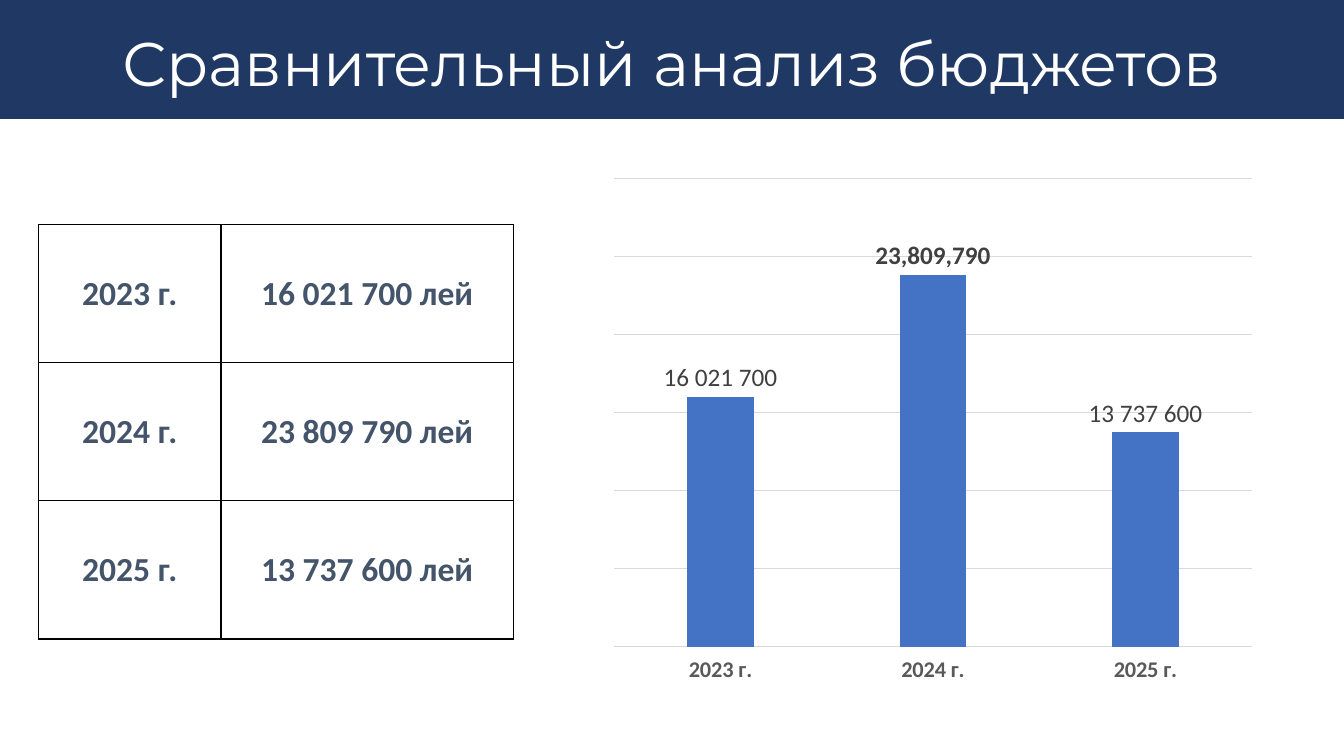
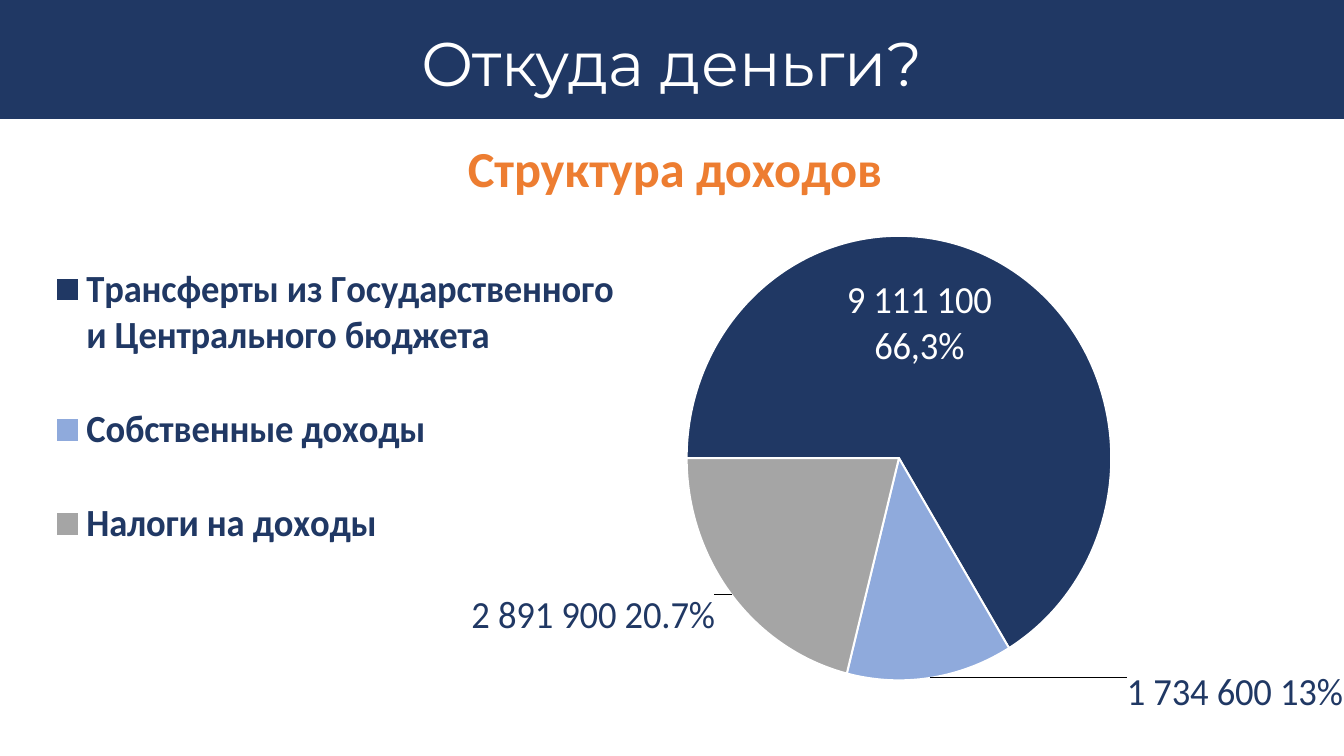
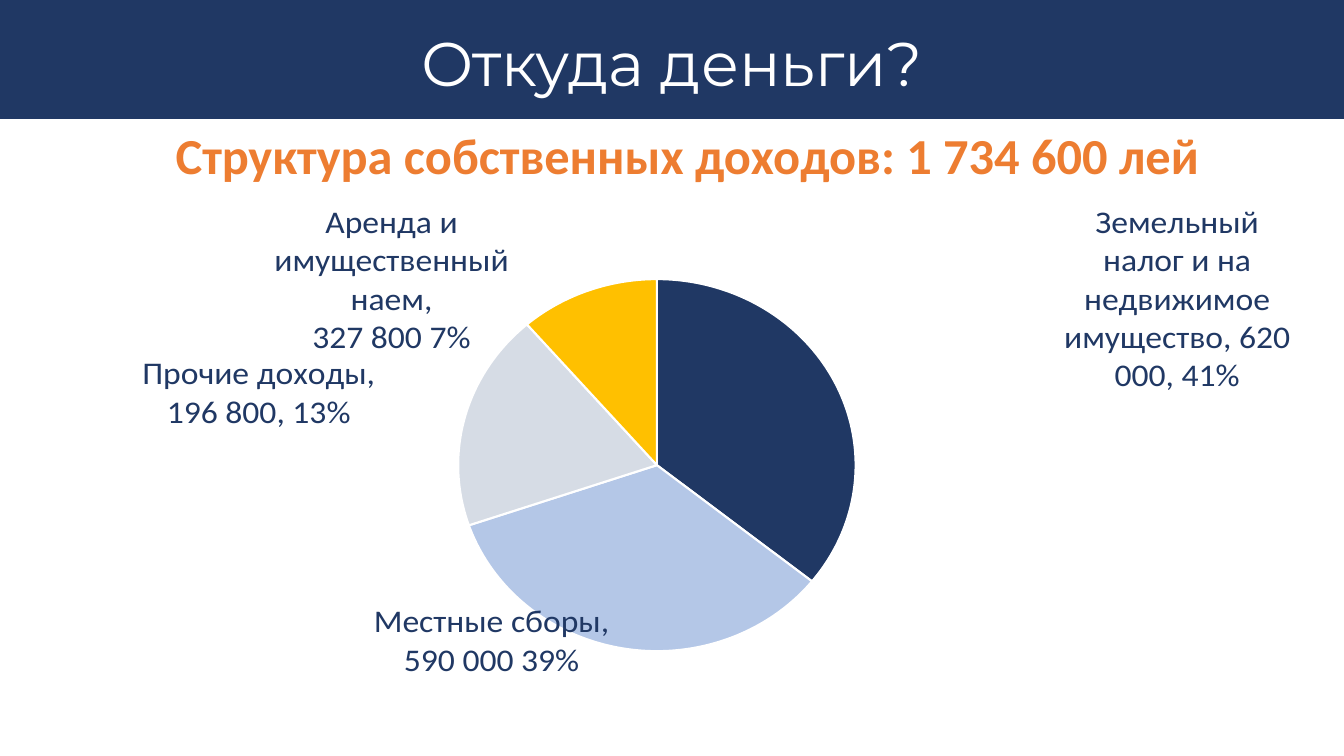
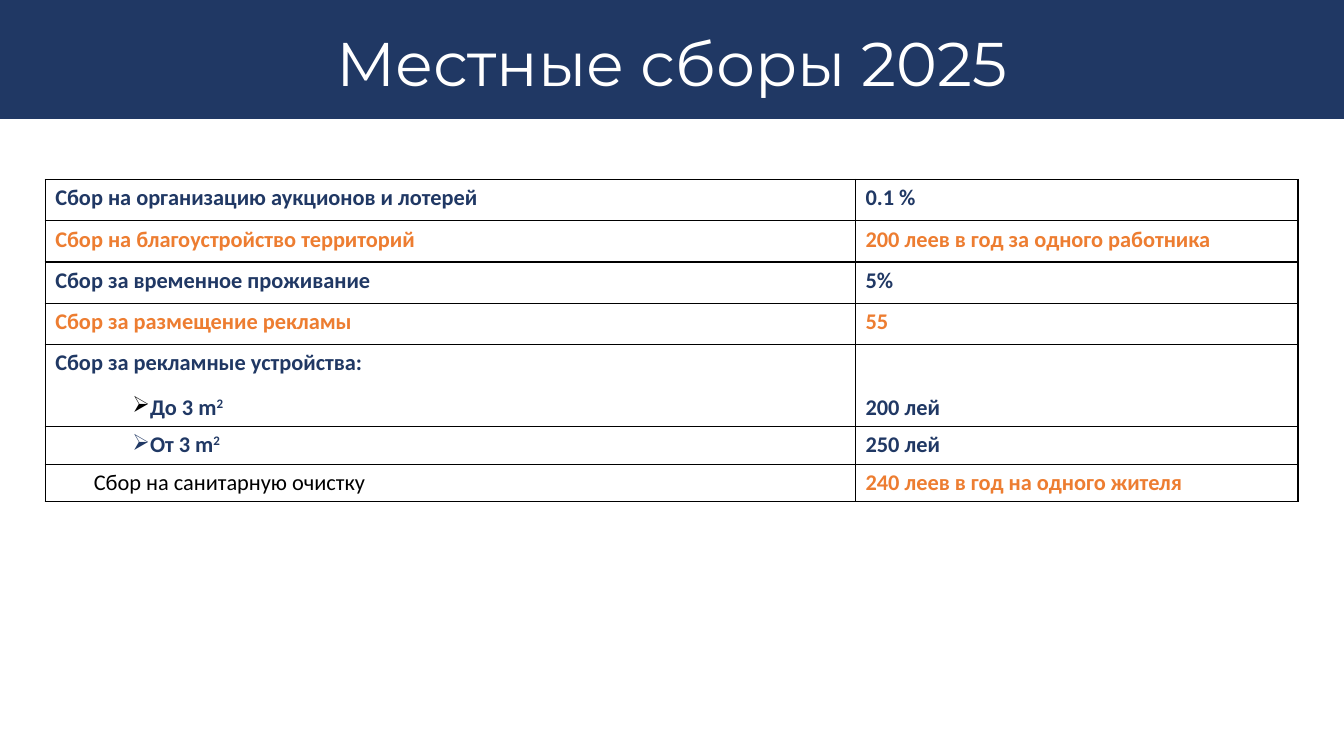
from dataclasses import dataclass

from pptx import Presentation
from pptx.chart.data import CategoryChartData
from pptx.dml.color import RGBColor
from pptx.enum.chart import XL_CHART_TYPE, XL_LABEL_POSITION, XL_LEGEND_POSITION, XL_TICK_LABEL_POSITION, XL_TICK_MARK
from pptx.enum.shapes import MSO_SHAPE
from pptx.enum.text import MSO_ANCHOR, PP_ALIGN
from pptx.oxml import parse_xml
from pptx.oxml.ns import nsdecls, qn
from pptx.util import Cm, Pt


@dataclass(frozen=True)
class Theme:
    navy: str = "203864"
    orange: str = "ED7D31"
    slate: str = "44546A"
    bar: str = "4472C4"
    grid: str = "D9D9D9"
    axis: str = "595959"
    value: str = "404040"
    black: str = "000000"
    white: str = "FFFFFF"
    title_font: str = "Montserrat"
    body_font: str = "Calibri"
    title: int = 44
    subtitle: int = 36
    pie_large: int = 28
    pie_small: int = 24
    amount: int = 24
    value_size: int = 18
    small: int = 16


@dataclass(frozen=True)
class Box:
    left: float
    top: float
    width: float
    height: float

    def lengths(self):
        return Cm(self.left), Cm(self.top), Cm(self.width), Cm(self.height)


THEME = Theme()
SLIDE_WIDTH, SLIDE_HEIGHT = 33.87, 19.05
HEADER = Box(0, 0, SLIDE_WIDTH, 3)


def assign(target, values):
    for name, value in values.items():
        setattr(target, name, value)


def style(font, size, color, bold=False, name=THEME.body_font):
    assign(font, {"size": Pt(size), "bold": bold, "name": name})
    font.color.rgb = RGBColor.from_string(color)


def paint(fill, color):
    fill.solid()
    fill.fore_color.rgb = RGBColor.from_string(color)


def stroke(line, color, width):
    line.color.rgb = RGBColor.from_string(color)
    line.width = Pt(width)


def add_header(slide, text, box):
    title = slide.shapes.title
    band = slide.shapes.add_shape(MSO_SHAPE.RECTANGLE, *box.lengths())
    band.shadow.inherit = False
    paint(band.fill, THEME.navy)
    band.line.fill.background()
    title.element.addprevious(band.element)
    assign(title, {
        "left": Cm(box.left + 0.43), "top": Cm(box.top + 0.64),
        "width": Cm(box.width - 0.85), "height": Cm(box.height - 0.94),
    })
    frame = title.text_frame
    frame.text = text
    assign(frame, {"word_wrap": True, "vertical_anchor": MSO_ANCHOR.MIDDLE})
    paragraph = frame.paragraphs[0]
    assign(paragraph, {"alignment": PP_ALIGN.CENTER, "line_spacing": 0.9})
    style(paragraph.runs[0].font, THEME.title, THEME.white, name=THEME.title_font)


def add_subtitle(slide, text, box):
    frame = slide.shapes.add_textbox(*box.lengths()).text_frame
    frame.word_wrap = True
    paragraph = frame.paragraphs[0]
    paragraph.alignment = PP_ALIGN.CENTER
    run = paragraph.add_run()
    run.text = text
    style(run.font, THEME.subtitle, THEME.orange, True)


def add_grid(slide, box, columns, rows):
    table = slide.shapes.add_table(len(rows), len(columns), *box.lengths()).table
    assign(table, {"first_row": False, "horz_banding": False})
    for column, width in zip(table.columns, columns):
        column.width = Cm(width)
    for row, height in zip(table.rows, rows):
        row.height = Cm(height)
    for cell in table.iter_cells():
        cell.fill.background()
        properties = cell._tc.get_or_add_tcPr()
        for position, side in enumerate(("lnL", "lnR", "lnT", "lnB")):
            properties.insert(position, parse_xml(
                f'<a:{side} {nsdecls("a")} w="12700"><a:solidFill>'
                f'<a:srgbClr val="{THEME.black}"/></a:solidFill></a:{side}>'))
    return table


def add_budget_table(slide, box, budgets):
    year_width = 4.6
    table = add_grid(slide, box, [year_width, box.width - year_width],
                     [box.height / len(budgets)] * len(budgets))
    for row, texts in zip(table.rows, budgets):
        for cell, text in zip(row.cells, texts):
            cell.text = text
            cell.vertical_anchor = MSO_ANCHOR.MIDDLE
            paragraph = cell.text_frame.paragraphs[0]
            paragraph.alignment = PP_ALIGN.CENTER
            style(paragraph.runs[0].font, THEME.amount, THEME.slate, True)


def write_fee(paragraph, text, color, bold=True, superscript=""):
    for part in filter(None, (text, superscript)):
        run = paragraph.add_run()
        run.text = part
        style(run.font, THEME.small, color, bold)
    if superscript:
        run._r.get_or_add_rPr().set("baseline", "30000")


def indent(paragraph, first_line=0.0, bullet_color=None):
    properties = paragraph._p.get_or_add_pPr()
    for name, value in {"marL": 0.97, "indent": first_line}.items():
        properties.set(name, str(Cm(value)))
    if bullet_color:
        properties.append(parse_xml(
            f'<a:buClr {nsdecls("a")}><a:srgbClr val="{bullet_color}"/></a:buClr>'))
        properties.append(parse_xml(f'<a:buChar {nsdecls("a")} char="➢"/>'))


def add_fee_table(slide, box, fees):
    name_width = 20.42
    table = add_grid(slide, box, [name_width, box.width - name_width],
                     [1.04] * len(fees) + [2.03, 0.96, 0.93])
    for index, texts in enumerate(fees):
        color = THEME.orange if index % 2 else THEME.navy
        for column, text in enumerate(texts):
            write_fee(table.cell(index, column).text_frame.paragraphs[0], text, color)

    devices, larger, cleaning = range(len(fees), len(fees) + 3)
    for column in range(2):
        table.cell(devices, column).vertical_anchor = MSO_ANCHOR.BOTTOM
    device_names = table.cell(devices, 0).text_frame
    heading = device_names.paragraphs[0]
    heading.space_after = Pt(6)
    write_fee(heading, "Сбор за рекламные устройства:", THEME.navy)
    smaller_name = device_names.add_paragraph()
    smaller_name.space_before = Pt(6)
    larger_name = table.cell(larger, 0).text_frame.paragraphs[0]
    for paragraph, text, bullet_color in ((smaller_name, "До 3 m", THEME.black),
                                          (larger_name, "От 3\u00a0m", THEME.navy)):
        indent(paragraph, 0.97, bullet_color)
        write_fee(paragraph, text, THEME.navy, superscript="2")
    cleaning_name = table.cell(cleaning, 0).text_frame.paragraphs[0]
    indent(cleaning_name)
    write_fee(cleaning_name, "Сбор на санитарную очистку", THEME.black, False)
    for index, text, color in ((devices, "200 лей", THEME.navy),
                               (larger, "250 лей", THEME.navy),
                               (cleaning, "240 леев в год на одного жителя", THEME.orange)):
        write_fee(table.cell(index, 1).text_frame.paragraphs[0], text, color)


def manual_layout(x, y, width=None, height=None, target=None):
    parts = []
    if target:
        parts.append(f'<c:layoutTarget val="{target}"/>')
    if width:
        parts.append('<c:xMode val="edge"/><c:yMode val="edge"/>')
    parts.append(f'<c:x val="{x}"/><c:y val="{y}"/>')
    if width:
        parts.append(f'<c:w val="{width}"/><c:h val="{height}"/>')
    return parse_xml(f'<c:layout {nsdecls("c")}><c:manualLayout>'
                     f'{"".join(parts)}</c:manualLayout></c:layout>')


def add_base_chart(slide, kind, box, categories, values, plot_area):
    data = CategoryChartData()
    data.categories = categories
    data.add_series("Series 1", values)
    chart = slide.shapes.add_chart(kind, *box.lengths(), data).chart
    assign(chart, {"has_title": False, "has_legend": False})
    style(chart.font, 10, THEME.black)
    area = next(chart.element.iter(qn("c:plotArea")))
    for layout in area.findall(qn("c:layout")):
        area.remove(layout)
    area.insert(0, manual_layout(*plot_area, target="inner"))
    return chart


def label_point(point, text, size, color, position):
    label = point.data_label
    frame = label.text_frame
    frame.text = text
    for paragraph in frame.paragraphs:
        for run in paragraph.runs:
            style(run.font, size, color)
    label.position = position


def add_budget_chart(slide, box, years, values):
    chart = add_base_chart(slide, XL_CHART_TYPE.COLUMN_CLUSTERED, box, years, values,
                           (0.025, 0.029, 0.954, 0.87))
    plot = chart.plots[0]
    assign(plot, {"gap_width": 219, "overlap": -27, "vary_by_categories": False})
    series = plot.series[0]
    paint(series.format.fill, THEME.bar)
    outside = XL_LABEL_POSITION.OUTSIDE_END
    labels = series.data_labels
    assign(labels, {"show_value": True, "number_format": "#,##0",
                    "number_format_is_linked": False, "position": outside})
    style(labels.font, THEME.value_size, THEME.value, True)
    for index, text in {0: "16 021 700", 2: "13 737 600"}.items():
        label_point(series.points[index], text, THEME.value_size, THEME.value, outside)
    years_axis = chart.category_axis
    assign(years_axis, {"major_tick_mark": XL_TICK_MARK.NONE,
                        "minor_tick_mark": XL_TICK_MARK.NONE,
                        "tick_label_position": XL_TICK_LABEL_POSITION.LOW})
    style(years_axis.tick_labels.font, THEME.small, THEME.axis, True)
    stroke(years_axis.format.line, THEME.grid, 0.75)
    amounts_axis = chart.value_axis
    assign(amounts_axis, {"minimum_scale": 0, "maximum_scale": 30000000,
                          "major_unit": 5000000, "has_major_gridlines": True,
                          "visible": False})
    stroke(amounts_axis.major_gridlines.format.line, THEME.grid, 0.75)


def add_pie(slide, box, sources, plot_area, size, leaders, start=0):
    names, amounts, colors, texts, text_colors, offsets = zip(*sources)
    chart = add_base_chart(slide, XL_CHART_TYPE.PIE, box, names, amounts, plot_area)
    plot = chart.plots[0]
    plot.vary_by_categories = True
    series = plot.series[0]
    labels = series.data_labels
    assign(labels, {"show_value": True, "show_percentage": True,
                    "position": XL_LABEL_POSITION.BEST_FIT})
    style(labels.font, size, THEME.navy, True)
    for index, color in enumerate(colors):
        point = series.points[index]
        paint(point.format.fill, color)
        stroke(point.format.line, THEME.white, 1.5)
        label_point(point, texts[index], size, text_colors[index],
                    XL_LABEL_POSITION.BEST_FIT)
    for label, offset in zip(chart.element.iter(qn("c:dLbl")), offsets):
        label.insert(1, manual_layout(*offset))
    for flag in chart.element.iter(qn("c:showLeaderLines")):
        flag.set("val", str(int(leaders)))
    pie = next(chart.element.iter(qn("c:pieChart")))
    for angle in pie.findall(qn("c:firstSliceAng")):
        pie.remove(angle)
    pie.append(parse_xml(f'<c:firstSliceAng {nsdecls("c")} val="{start}"/>'))
    return chart


def add_legend(chart, area):
    chart.has_legend = True
    legend = chart.legend
    assign(legend, {"position": XL_LEGEND_POSITION.RIGHT, "include_in_layout": False})
    style(legend.font, THEME.pie_large, THEME.navy, True)
    holder = next(chart.element.iter(qn("c:legend")))
    for layout in holder.findall(qn("c:layout")):
        holder.remove(layout)
    holder.find(qn("c:legendPos")).addnext(manual_layout(*area))


def build_comparison(slide):
    years = ["2023 г.", "2024 г.", "2025 г."]
    amounts = [16021700, 23809790, 13737600]
    budgets = [(year, f"{amount:,} лей".replace(",", " "))
               for year, amount in zip(years, amounts)]
    add_budget_table(slide, Box(0.97, 5.66, 11.97, 10.44), budgets)
    add_budget_chart(slide, Box(15.06, 4.11, 16.84, 13.56), years, amounts)


def build_income(slide):
    sources = [
        ("Трансферты из Государственного и Центрального бюджета", 9111100, THEME.navy,
         "9 111 100\n66,3%", THEME.white, (-0.13, 0.19)),
        ("Собственные доходы", 1734600, "8FAADC",
         "1 734 600 13%", THEME.navy, (0.16, -0.02)),
        ("Налоги на доходы", 2891900, "A5A5A5",
         "2 891 900 20.7%", THEME.navy, (-0.01, -0.01)),
    ]
    chart = add_pie(slide, Box(0.81, 3.33, 33.05, 15.06), sources,
                    (0.535, 0.15, 0.347, 0.817), THEME.pie_large, True, 270)
    add_legend(chart, (0.01, 0.148, 0.475, 0.645))
    add_subtitle(slide, "Структура доходов", Box(0.58, 3.33, 32.87, 1.8))


def build_own_income(slide):
    sources = [
        ("Земельный налог и на недвижимое имущество", 620000, THEME.navy,
         "Земельный\nналог и на\nнедвижимое\nимущество, 620\n000, 41%",
         THEME.navy, (0.18, -0.06)),
        ("Местные сборы", 590000, "B4C7E7",
         "Местные сборы,\n590 000 39%", THEME.navy, (-0.01, -0.1)),
        ("Аренда и имущественный наем", 327800, "D6DCE5",
         "Аренда и\nимущественный\nнаем,\n327 800 7%", THEME.navy, (0.04, -0.12)),
        ("Прочие доходы", 196800, "FFC000",
         "Прочие доходы,\n196 800, 13%", THEME.navy, (-0.17, 0.29)),
    ]
    add_pie(slide, Box(1.35, 4.8, 31.19, 13.61), sources,
            (0.321, 0.149, 0.333, 0.736), THEME.pie_small, False)
    add_subtitle(slide, "Структура собственных доходов: 1 734 600 лей",
                 Box(0.9, 3, 32.87, 1.8))


def build_fees(slide):
    fees = [
        ("Сбор на организацию аукционов и лотерей", "0.1 %"),
        ("Сбор на благоустройство территорий", "200 леев в год за одного работника"),
        ("Сбор за временное проживание", "5%"),
        ("Сбор за размещение рекламы", "55"),
    ]
    add_fee_table(slide, Box(1.14, 4.52, 31.57, 8.08), fees)


def main():
    deck = Presentation()
    assign(deck, {"slide_width": Cm(SLIDE_WIDTH), "slide_height": Cm(SLIDE_HEIGHT)})
    pages = [
        ("Сравнительный анализ бюджетов", build_comparison),
        ("Откуда деньги?", build_income),
        ("Откуда деньги?", build_own_income),
        ("Местные сборы 2025", build_fees),
    ]
    for title, build in pages:
        slide = deck.slides.add_slide(deck.slide_layouts[5])
        add_header(slide, title, HEADER)
        build(slide)
    deck.save("out.pptx")


if __name__ == "__main__":
    main()
